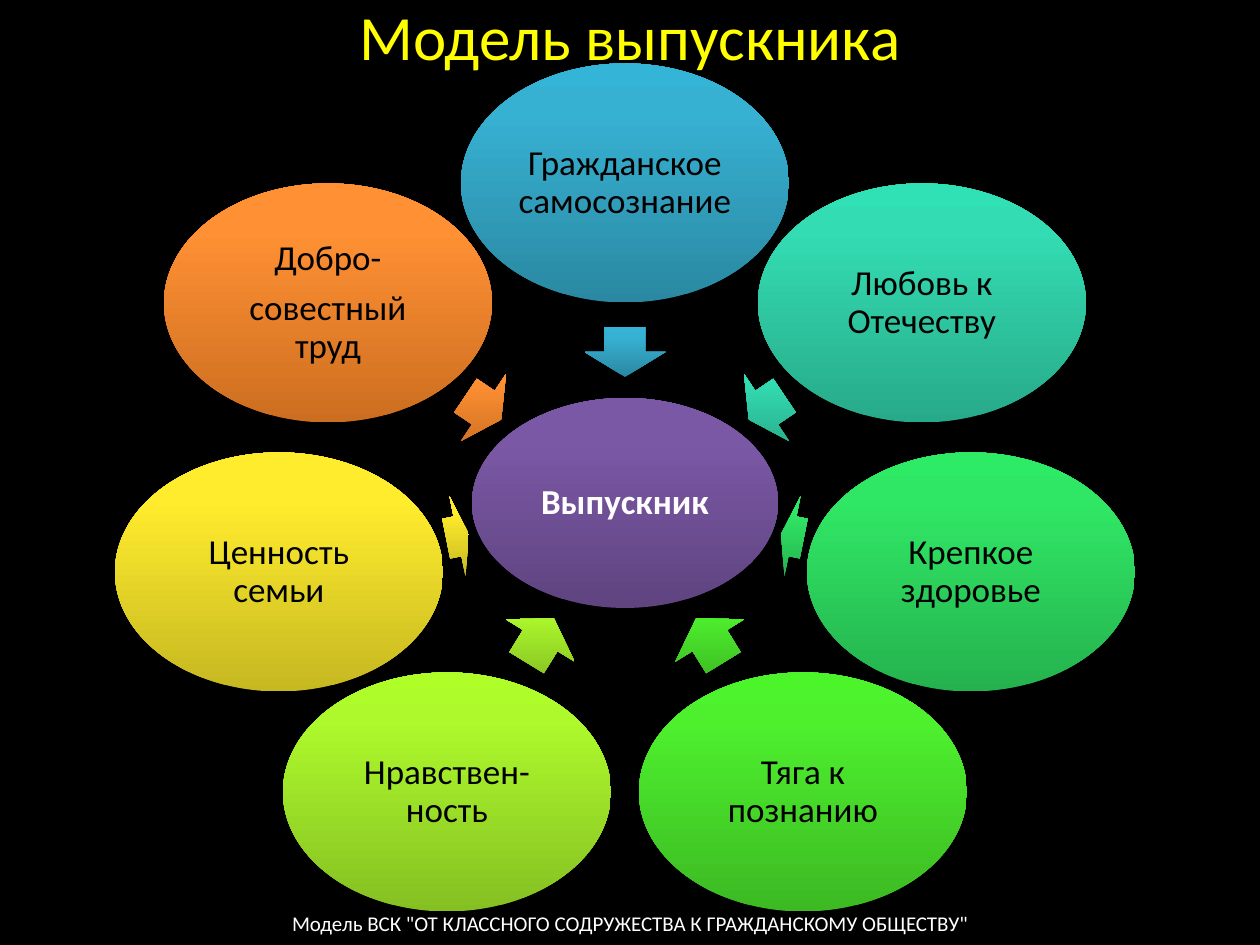
import copy
import math

import pptx
import pptx.dml.color
import pptx.enum.shapes
import pptx.enum.text
import pptx.oxml.ns
import pptx.util

EMU_PER_PX = 914400 / 126
MSO_SHAPE = pptx.enum.shapes.MSO_SHAPE

COLORS = {
    "background": "000000",
    "title": "FFFF00",
    "light": "FFFFFF",
    "dark": "000000",
}
# Gradients run from the bottom edge to the top edge
STOPS = (0, 0.8, 1)
GRADIENTS = {
    "purple": ("5F4480", "7B58A6", "7C57A8"),
    "blue": ("2A88A2", "37B1D2", "34B4D6"),
    "teal": ("27AA89", "33DCB2", "30E1B5"),
    "emerald": ("25B24E", "30E765", "2DEB64"),
    "green": ("3CB923", "4EF02E", "4CF52A"),
    "lime": ("85C022", "ADF92C", "AFFE28"),
    "yellow": ("C6B821", "FFEC2D", "FFED2E"),
    "orange": ("CC6E20", "FF9034", "FF9136"),
}

HUB_CENTER = (625, 503)
HUB_SIZE = (306, 210)
QUALITY_SIZE = (328, 239)
ARROW_WIDTH = 81

# Offset from the hub, arrow's share of that offset, arrow length
TOP = (0, -320, 0.472, 50)
UPPER = (297, -200, 0.477, 43)
MIDDLE = (346, 69, 0.484, 23)
LOWER = (178, 289, 0.476, 52)

# Text, gradient, place, side (1 right, -1 left)
QUALITIES = [
    ("Гражданское самосознание", "blue", TOP, 1),
    ("Любовь к Отечеству", "teal", UPPER, 1),
    ("Крепкое здоровье", "emerald", MIDDLE, 1),
    ("Тяга к познанию", "green", LOWER, 1),
    ("Нравствен-ность", "lime", LOWER, -1),
    ("Ценность семьи", "yellow", MIDDLE, -1),
    ("Добро-\nсовестный труд", "orange", UPPER, -1),
]


def px(value):
    return pptx.util.Emu(round(value * EMU_PER_PX))


def rgb(value):
    return pptx.dml.color.RGBColor.from_string(value)


def write_text(frame, text, size, color, font="Calibri", bold=False,
               line_spacing=None, space_after=None):
    frame.word_wrap = True
    frame.vertical_anchor = pptx.enum.text.MSO_ANCHOR.MIDDLE
    frame.text = text
    for paragraph in frame.paragraphs:
        paragraph.alignment = pptx.enum.text.PP_ALIGN.CENTER
        if line_spacing is not None:
            paragraph.line_spacing = line_spacing
        if space_after is not None:
            paragraph.space_after = pptx.util.Pt(space_after)
        for run in paragraph.runs:
            run.font.name = font
            run.font.size = pptx.util.Pt(size)
            run.font.bold = bold
            run.font.color.rgb = rgb(color)


class SlideBuilder:
    def __init__(self, presentation):
        layout = presentation.slide_layouts.get_by_name("Title Only")
        self.slide = presentation.slides.add_slide(layout)
        background = self.slide.background.fill
        background.solid()
        background.fore_color.rgb = rgb(COLORS["background"])

    def title(self, text, left, top, width, height):
        shape = self.slide.shapes.title
        shape.left, shape.top = px(left), px(top)
        shape.width, shape.height = px(width), px(height)
        write_text(shape.text_frame, text, size=36, color=COLORS["title"])

    def footer(self, text, left, top, width, height):
        box = self.slide.shapes.add_textbox(
            px(left), px(top), px(width), px(height))
        write_text(box.text_frame, text, size=12, color=COLORS["light"])

    def gradient_shape(self, kind, center, size, gradient):
        (x, y), (width, height) = center, size
        shape = self.slide.shapes.add_shape(
            kind, px(x - width / 2), px(y - height / 2), px(width), px(height))
        shape.shadow.inherit = False
        shape.line.fill.background()
        shape.fill.gradient()
        shape.fill.gradient_angle = 90
        # A third stop, and a direction that ignores the shape's rotation
        fill = shape.element.spPr.find(pptx.oxml.ns.qn("a:gradFill"))
        fill.set("rotWithShape", "0")
        stop_list = fill.find(pptx.oxml.ns.qn("a:gsLst"))
        stop_list.append(copy.deepcopy(stop_list[-1]))
        for stop, position, color in zip(
                shape.fill.gradient_stops, STOPS, GRADIENTS[gradient]):
            stop.position = position
            stop.color.rgb = rgb(color)
        return shape

    def ellipse(self, text, center, size, gradient, color, bold=False):
        shape = self.gradient_shape(MSO_SHAPE.OVAL, center, size, gradient)
        frame = shape.text_frame
        frame.margin_left = frame.margin_right = px(4)
        frame.margin_top = frame.margin_bottom = px(4)
        write_text(frame, text, size=20, color=color, bold=bold,
                   line_spacing=0.9, space_after=7)

    def arrow(self, center, length, rotation, gradient):
        shape = self.gradient_shape(
            MSO_SHAPE.LEFT_ARROW, center, (length, ARROW_WIDTH), gradient)
        shape.rotation = rotation


def main():
    presentation = pptx.Presentation()
    presentation.slide_width = px(1260)
    presentation.slide_height = px(945)
    builder = SlideBuilder(presentation)

    # Title and footer
    builder.title("Модель выпускника", 63, -44, 1134, 158)
    builder.footer(
        'Модель ВСК "ОТ КЛАССНОГО СОДРУЖЕСТВА К ГРАЖДАНСКОМУ ОБЩЕСТВУ"',
        253, 898, 755, 50)

    # Hub
    builder.ellipse("Выпускник", HUB_CENTER, HUB_SIZE, "purple",
                    COLORS["light"], bold=True)

    # Qualities around the hub, each with an arrow pointing to it
    hub_x, hub_y = HUB_CENTER
    for text, gradient, (offset, dy, share, length), side in QUALITIES:
        dx = side * offset
        rotation = math.degrees(math.atan2(dy, dx)) % 360
        builder.arrow((hub_x + share * dx, hub_y + share * dy),
                      length, rotation, gradient)
        builder.ellipse(text, (hub_x + dx, hub_y + dy), QUALITY_SIZE,
                        gradient, COLORS["dark"])

    presentation.save("out.pptx")


if __name__ == "__main__":
    main()
